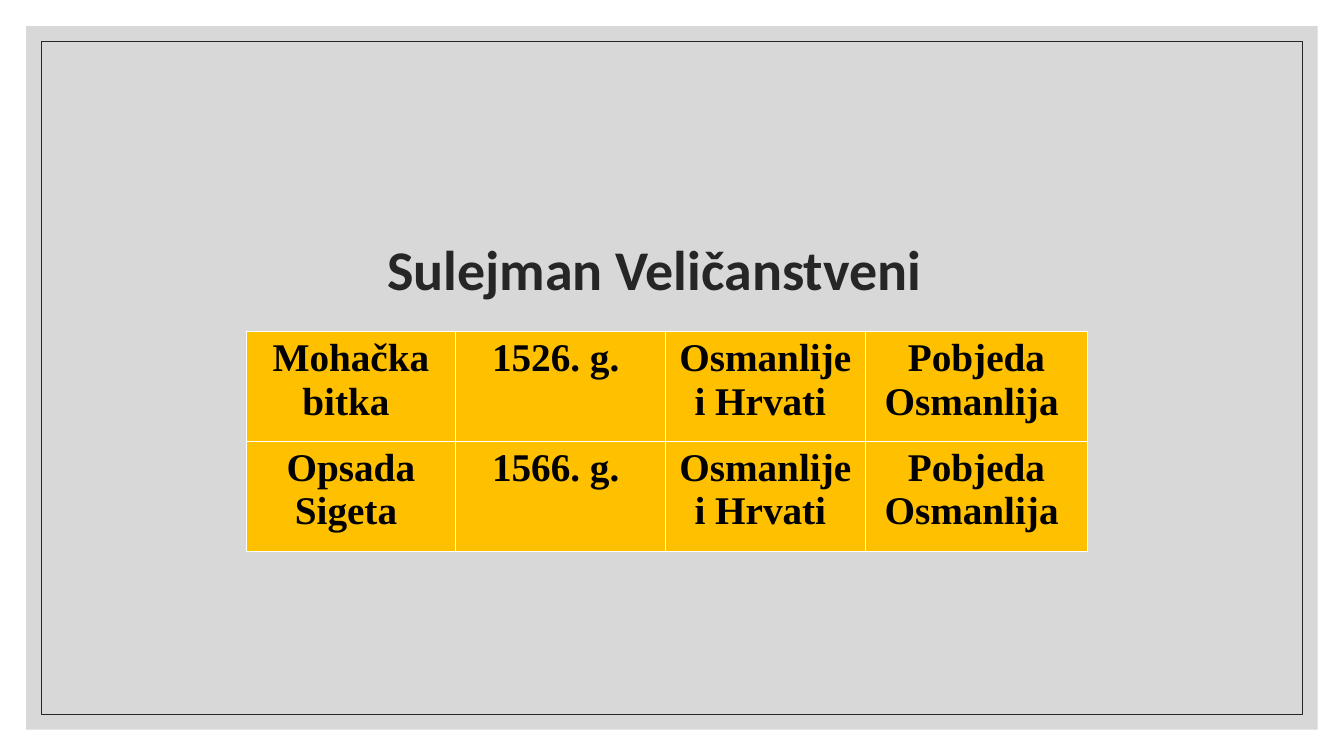
from lxml import etree
from pptx import Presentation
from pptx.dml.color import RGBColor
from pptx.enum.shapes import MSO_SHAPE
from pptx.enum.text import MSO_ANCHOR, PP_ALIGN
from pptx.oxml import parse_xml
from pptx.oxml.ns import nsdecls, qn
from pptx.util import Inches, Pt

RECTANGLE = MSO_SHAPE.RECTANGLE
MIDDLE = MSO_ANCHOR.MIDDLE
LEFT, CENTER = PP_ALIGN.LEFT, PP_ALIGN.CENTER

COLORS = {
    "panel": "BFBFBF",
    "ink": "262626",
    "cell": "FFC000",
    "cell_text": "000000",
    "border": "FFFFFF",
}
SLIDE_WIDTH, SLIDE_HEIGHT = 13.33, 7.5
COLUMN_WIDTHS = [2.08, 2.08, 1.98, 2.21]
ROW_HEIGHT = 1.09
BATTLES = [
    ["Mohačka bitka ", "1526. g. ", "Osmanlije i Hrvati ", "Pobjeda Osmanlija "],
    ["Opsada Sigeta ", "1566. g. ", "Osmanlije i Hrvati ", "Pobjeda Osmanlija "],
]


def color(name):
    return RGBColor.from_string(COLORS[name])


def add_text(para, text, font, size, color_name, align):
    para.alignment = align
    span = para.add_run()
    span.text = text
    span.font.name = font
    span.font.size = Pt(size)
    span.font.bold = True
    span.font.color.rgb = color(color_name)


def add_inset_rectangle(page, inset):
    shape = page.shapes.add_shape(
        RECTANGLE, Inches(inset), Inches(inset),
        Inches(SLIDE_WIDTH - 2 * inset), Inches(SLIDE_HEIGHT - 2 * inset))
    shape.shadow.inherit = False
    return shape


def add_frame(page):
    panel = add_inset_rectangle(page, 0.26)
    panel.fill.solid()
    panel.fill.fore_color.rgb = color("panel")
    panel.line.fill.background()
    tint = panel.fill._xPr.find(qn("a:solidFill"))[0]
    etree.SubElement(tint, qn("a:alpha"), val="60000")

    outline = add_inset_rectangle(page, 0.41)
    outline.fill.background()
    outline.line.color.rgb = color("ink")
    outline.line.width = Pt(0.5)


def add_title(page, left, top, width, height):
    title = page.shapes.title
    title.left, title.top = Inches(left), Inches(top)
    title.width, title.height = Inches(width), Inches(height)
    title.text_frame.word_wrap = True
    title.text_frame.vertical_anchor = MIDDLE
    para = title.text_frame.paragraphs[0]
    para.line_spacing = 0.9
    add_text(para, "Sulejman Veličanstveni", "Calibri", 40, "ink", LEFT)


def set_borders(cell):
    properties = cell._tc.get_or_add_tcPr()
    for position, side in enumerate(("lnL", "lnR", "lnT", "lnB")):
        properties.insert(position, parse_xml(
            f'<a:{side} {nsdecls("a")} w="{Pt(0.75)}"><a:solidFill>'
            f'<a:srgbClr val="{COLORS["border"]}"/></a:solidFill></a:{side}>'))


def add_battle_table(page, left, top):
    table = page.shapes.add_table(
        len(BATTLES), len(COLUMN_WIDTHS), Inches(left), Inches(top),
        Inches(sum(COLUMN_WIDTHS)), Inches(ROW_HEIGHT * len(BATTLES))).table
    for column, width in zip(table.columns, COLUMN_WIDTHS):
        column.width = Inches(width)
    for row, texts in zip(table.rows, BATTLES):
        row.height = Inches(ROW_HEIGHT)
        for cell, text in zip(row.cells, texts):
            cell.fill.solid()
            cell.fill.fore_color.rgb = color("cell")
            set_borders(cell)
            add_text(cell.text_frame.paragraphs[0], text,
                     "Times New Roman", 28, "cell_text", CENTER)


def main():
    deck = Presentation()
    deck.slide_width = Inches(SLIDE_WIDTH)
    deck.slide_height = Inches(SLIDE_HEIGHT)
    page = deck.slides.add_slide(deck.slide_layouts.get_by_name("Title Only"))
    add_frame(page)
    add_title(page, 3.74, 2.28, 5.73, 0.85)
    page.shapes._spTree.append(page.shapes.title._element)
    add_battle_table(page, 2.44, 3.29)
    deck.save("out.pptx")


if __name__ == "__main__":
    main()
